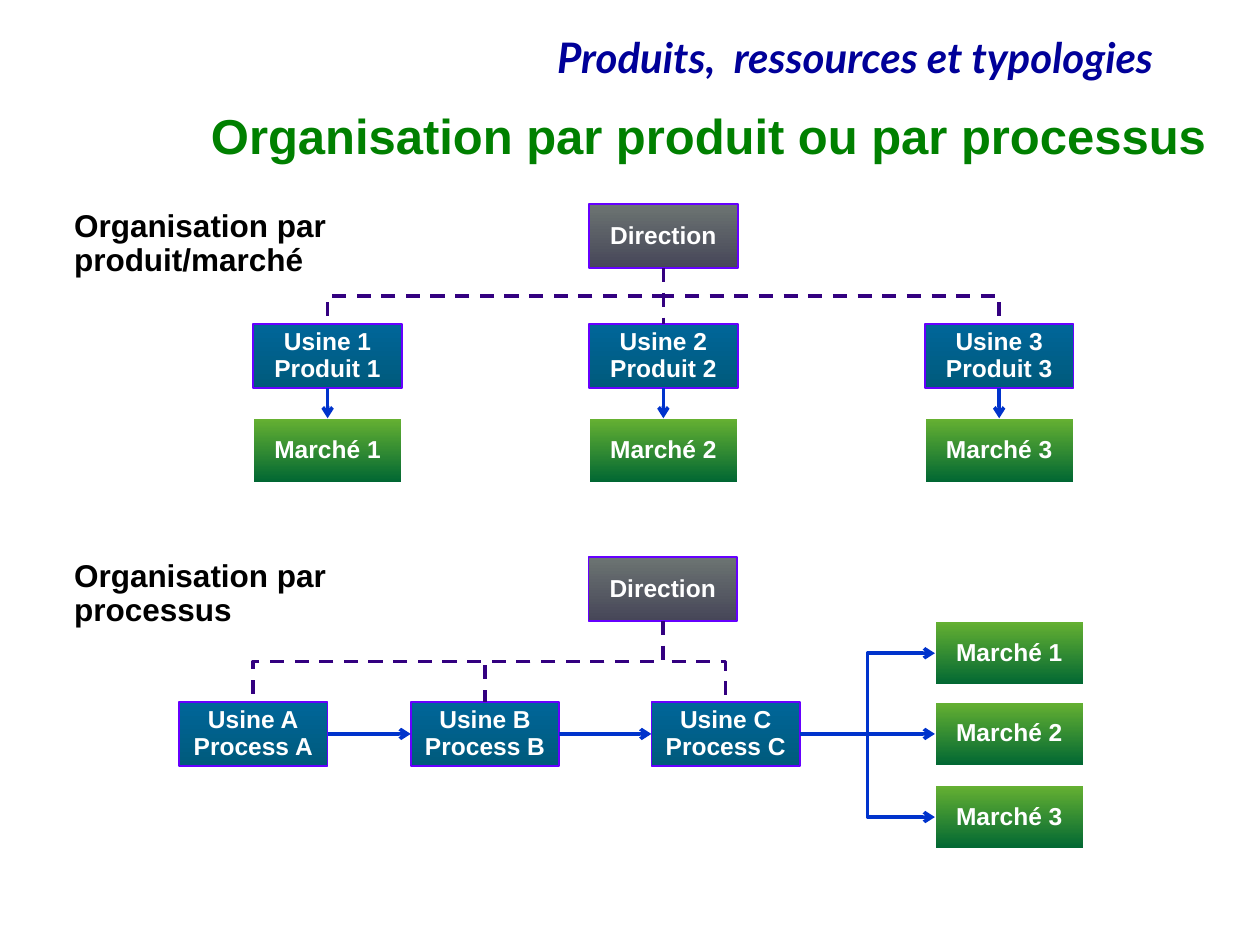
from lxml.etree import SubElement
from pptx import Presentation
from pptx.dml.color import RGBColor
from pptx.enum.dml import MSO_LINE as Dash
from pptx.enum.shapes import MSO_CONNECTOR as Link, MSO_SHAPE as Shape
from pptx.enum.text import MSO_ANCHOR as Anchor, PP_ALIGN as Align
from pptx.oxml.ns import qn
from pptx.util import Inches, Pt

TOP, LEFT, BOTTOM, RIGHT = range(4)
WIDE, HIGH = 11.8, 5.1  # box size in grid cells
GRAY = ("6C7472", "464658", "6600FF")
BLUE = ("006699", "005A7C", "6600FF")
GREEN = ("66B132", "006633", "FFFFFF")


def rgb(code):
    return RGBColor.from_string(code)


class Board:
    """Slide on a grid of 100 columns by 75 rows."""

    def __init__(self, deck):
        deck.slide_width, deck.slide_height = Inches(10), Inches(7.5)
        self.cell = deck.slide_width / 100
        self.slide = deck.slides.add_slide(deck.slide_layouts[6])

    def grid(self, *cells):
        return [round(n * self.cell) for n in cells]

    def letter(self, frame, text, size, color, align, font="Arial", gap=0.9, slant=False):
        frame.word_wrap = True
        frame.text = text
        for para in frame.paragraphs:
            para.alignment, para.line_spacing = align, gap
            para.font.name, para.font.size = font, Pt(size)
            para.font.bold, para.font.italic = True, slant
            para.font.color.rgb = rgb(color)

    def text(self, area, text, size, color, align=Align.LEFT, anchor=Anchor.TOP, **style):
        frame = self.slide.shapes.add_textbox(*self.grid(*area)).text_frame
        frame.vertical_anchor = anchor
        self.letter(frame, text, size, color, align, **style)

    def box(self, col, row, text, look):
        start, stop, edge = look
        box = self.slide.shapes.add_shape(
            Shape.RECTANGLE, *self.grid(col, row, WIDE, HIGH))
        box.shadow.inherit = False
        box.fill.gradient()
        box.fill.gradient_angle = 270
        for mark, code in zip(box.fill.gradient_stops, (start, stop)):
            mark.color.rgb = rgb(code)
        box.line.color.rgb, box.line.width = rgb(edge), Pt(1)
        frame = box.text_frame
        frame.margin_left = frame.margin_right = 0
        frame.margin_top = frame.margin_bottom = 0
        frame.vertical_anchor = Anchor.MIDDLE
        self.letter(frame, text, 14, "FFFFFF", Align.CENTER)
        return box

    def join(self, kind, head, out, tail, into, color):
        line = self.slide.shapes.add_connector(kind, 0, 0, 0, 0)
        line.begin_connect(head, out)
        line.end_connect(tail, into)
        line.line.color.rgb, line.line.width = rgb(color), Pt(2)
        SubElement(line._element.spPr, qn("a:effectLst"))
        return line

    def flow(self, head, tail, out=RIGHT, into=LEFT, kind=Link.STRAIGHT):
        line = self.join(kind, head, out, tail, into, "0033CC")
        SubElement(line.line._get_or_add_ln(), qn("a:tailEnd"), type="arrow")

    def command(self, head, tail):
        """Dashed link going down from head to tail, bent if they are not aligned."""
        kind = Link.STRAIGHT if head.left == tail.left else Link.ELBOW
        line = self.join(kind, head, BOTTOM, tail, TOP, "330080")
        line.line.dash_style = Dash.DASH
        if kind == Link.ELBOW:
            self.turn(line)

    def turn(self, line):
        """Rotate an elbow so that it leaves and arrives vertically."""
        right = line.end_x > line.begin_x
        midx = (line.begin_x + line.end_x) // 2
        midy = (line.begin_y + line.end_y) // 2
        wide, high = line.height, line.width
        line.left, line.top = midx - wide // 2, midy - high // 2
        line.width, line.height = wide, high
        frame = line._element.spPr.find(qn("a:xfrm"))
        frame.set("rot", str((270 if right else 90) * 60000))
        frame.set("flipH", "1" if right else "0")


def products(board):
    board.text((4.9, 16.2, 31.7, 6), "Organisation par produit/marché", 18, "000000")
    cols = [20.1 + 26.65 * n for n in range(3)]
    chief = board.box(cols[1], 16.2, "Direction", GRAY)
    for n, col in enumerate(cols, 1):
        plant = board.box(col, 25.7, f"Usine {n}\nProduit {n}", BLUE)
        market = board.box(col, 33.2, f"Marché {n}", GREEN)
        board.flow(plant, market, BOTTOM, TOP)
        board.command(chief, plant)


def processes(board):
    board.text((4.9, 44, 27.3, 6), "Organisation par processus", 18, "000000")
    chief = board.box(46.7, 44.2, "Direction", GRAY)
    plants = [board.box(col, 55.7, f"Usine {key}\nProcess {key}", BLUE)
              for col, key in zip((14.2, 32.6, 51.7), "ABC")]
    for plant in plants:
        board.command(chief, plant)
    for head, tail in zip(plants, plants[1:]):
        board.flow(head, tail)
    for n, row in enumerate((49.3, 55.7, 62.3), 1):
        market = board.box(74.2, row, f"Marché {n}", GREEN)
        kind = Link.STRAIGHT if market.top == plants[-1].top else Link.ELBOW
        board.flow(plants[-1], market, kind=kind)


def main():
    deck = Presentation()
    board = Board(deck)
    board.text((12.5, 2.5, 80, 5), "Produits,  ressources et typologies", 24,
               "000099", Align.RIGHT, font="Lato", slant=True)
    board.text((6.7, 5.2, 90, 9.4), "Organisation par produit ou par processus", 28,
               "008000", Align.RIGHT, Anchor.MIDDLE, gap=Pt(45.8))
    products(board)
    processes(board)
    deck.save("out.pptx")


if __name__ == "__main__":
    main()
